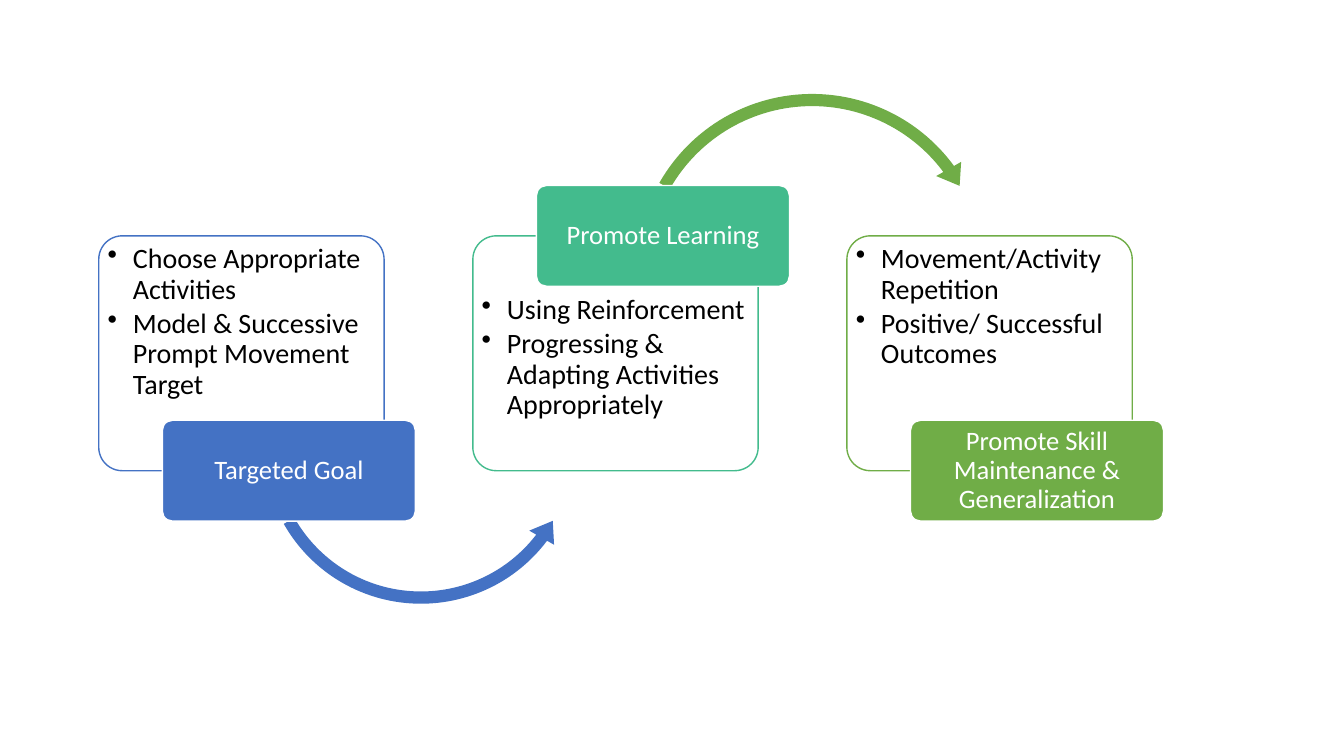
"""Build a three-step process slide with panels, labels and curved arrows."""
from dataclasses import dataclass

from lxml import etree
from pptx import Presentation
from pptx.dml.color import RGBColor
from pptx.enum.shapes import MSO_SHAPE
from pptx.enum.text import MSO_ANCHOR, PP_ALIGN
from pptx.oxml.ns import qn
from pptx.util import Inches, Pt

ROUNDED = MSO_SHAPE.ROUNDED_RECTANGLE
ARC_OVER = MSO_SHAPE.CIRCULAR_ARROW
ARC_UNDER = MSO_SHAPE.LEFT_CIRCULAR_ARROW
TOP, MIDDLE = MSO_ANCHOR.TOP, MSO_ANCHOR.MIDDLE
LEFT, CENTER = PP_ALIGN.LEFT, PP_ALIGN.CENTER

BLUE = RGBColor(0x44, 0x72, 0xC4)
TEAL = RGBColor(0x43, 0xBB, 0x8D)
GREEN = RGBColor(0x70, 0xAD, 0x47)
WHITE = RGBColor(0xFF, 0xFF, 0xFF)
BLACK = RGBColor(0, 0, 0)

FONT = "Calibri"
FIRST_LEFT, STEP_PITCH = 0.98, 3.71
PANEL_TOP, PANEL_WIDTH, PANEL_HEIGHT = 2.34, 2.83, 2.33
LABEL_SHIFT, LABEL_WIDTH, LABEL_HEIGHT = 0.63, 2.51, 1.0


@dataclass(frozen=True)
class Arc:
    kind: MSO_SHAPE
    left: float
    top: float
    size: float
    color: RGBColor
    adjustments: tuple[float, ...]


@dataclass(frozen=True)
class Step:
    label: str
    points: tuple[str, ...]
    color: RGBColor
    label_on_top: bool = False
    arc: Arc | None = None


STEPS = (
    Step(
        "Targeted Goal",
        ("Choose Appropriate Activities", "Model & Successive Prompt Movement Target"),
        BLUE,
        arc=Arc(ARC_UNDER, 2.53, 2.78, 3.29, BLUE, (0.037, 4.574, 22.329, 90.245, 0.043)),
    ),
    Step(
        "Promote Learning",
        ("Using Reinforcement", "Progressing & Adapting Activities Appropriately"),
        TEAL,
        label_on_top=True,
        arc=Arc(ARC_OVER, 6.23, 0.85, 3.65, GREEN, (0.033, 4.086, 194.159, 125.755, 0.039)),
    ),
    Step(
        "Promote Skill Maintenance & Generalization",
        ("Movement/Activity Repetition", "Positive/ Successful Outcomes"),
        GREEN,
    ),
)


def add_box(page, left: float, top: float, width: float, height: float,
            fill: RGBColor, line: RGBColor):
    """Add a rounded box with a thin outline."""
    box = page.shapes.add_shape(
        ROUNDED, Inches(left), Inches(top), Inches(width), Inches(height))
    box.shadow.inherit = False
    box.adjustments[0] = 0.1
    box.fill.solid()
    box.fill.fore_color.rgb = fill
    box.line.color.rgb = line
    box.line.width = Pt(1)
    return box


def write_text(box, lines: tuple[str, ...], size: int, color: RGBColor,
               align: PP_ALIGN, anchor: MSO_ANCHOR) -> None:
    """Fill a box with evenly formatted paragraphs."""
    frame = box.text_frame
    frame.word_wrap = True
    frame.vertical_anchor = anchor
    frame.text = "\n".join(lines)
    for para in frame.paragraphs:
        para.alignment = align
        para.line_spacing = 0.9
        para.space_after = Pt(3)
        for span in para.runs:
            span.font.name = FONT
            span.font.size = Pt(size)
            span.font.color.rgb = color


def add_bullet(para) -> None:
    """Give a paragraph a round bullet with a hanging indent."""
    properties = para._p.get_or_add_pPr()
    properties.set("marL", str(Inches(0.25)))
    properties.set("indent", str(-Inches(0.25)))
    etree.SubElement(properties, qn("a:buChar")).set("char", "•")


def add_panel(page, step: Step, left: float) -> None:
    """Add the outlined panel with its bulleted points."""
    panel = add_box(page, left, PANEL_TOP, PANEL_WIDTH, PANEL_HEIGHT, WHITE, step.color)
    color_element = panel.fill._xPr.find(qn("a:solidFill"))[0]
    etree.SubElement(color_element, qn("a:alpha")).set("val", "90000")
    frame = panel.text_frame
    frame.margin_left = frame.margin_right = frame.margin_bottom = Inches(0.02)
    frame.margin_top = Inches(0.52 if step.label_on_top else 0.02)
    write_text(panel, step.points, 20, BLACK, LEFT, TOP)
    for para in frame.paragraphs:
        add_bullet(para)


def add_arc(page, arc: Arc) -> None:
    """Add the curved arrow that leads to the next step."""
    arrow = page.shapes.add_shape(
        arc.kind, Inches(arc.left), Inches(arc.top), Inches(arc.size), Inches(arc.size))
    arrow.shadow.inherit = False
    for index, value in enumerate(arc.adjustments):
        arrow.adjustments[index] = value
    arrow.fill.solid()
    arrow.fill.fore_color.rgb = arc.color
    arrow.line.fill.background()


def add_label(page, step: Step, left: float) -> None:
    """Add the filled label centred on the panel's top or bottom edge."""
    edge = PANEL_TOP if step.label_on_top else PANEL_TOP + PANEL_HEIGHT
    label = add_box(page, left + LABEL_SHIFT, edge - LABEL_HEIGHT / 2,
                    LABEL_WIDTH, LABEL_HEIGHT, step.color, WHITE)
    frame = label.text_frame
    frame.margin_left = frame.margin_right = Inches(0.04)
    frame.margin_top = frame.margin_bottom = Inches(0.03)
    write_text(label, (step.label,), 19, WHITE, CENTER, MIDDLE)
    frame.paragraphs[0].space_after = Pt(0)


def main() -> None:
    """Create the deck and save it."""
    deck = Presentation()
    deck.slide_width, deck.slide_height = Inches(13.33), Inches(7.5)
    page = deck.slides.add_slide(deck.slide_layouts[6])
    for index, step in enumerate(STEPS):
        left = FIRST_LEFT + index * STEP_PITCH
        add_panel(page, step, left)
        if step.arc:
            add_arc(page, step.arc)
        add_label(page, step, left)
    deck.save("out.pptx")


if __name__ == "__main__":
    main()
